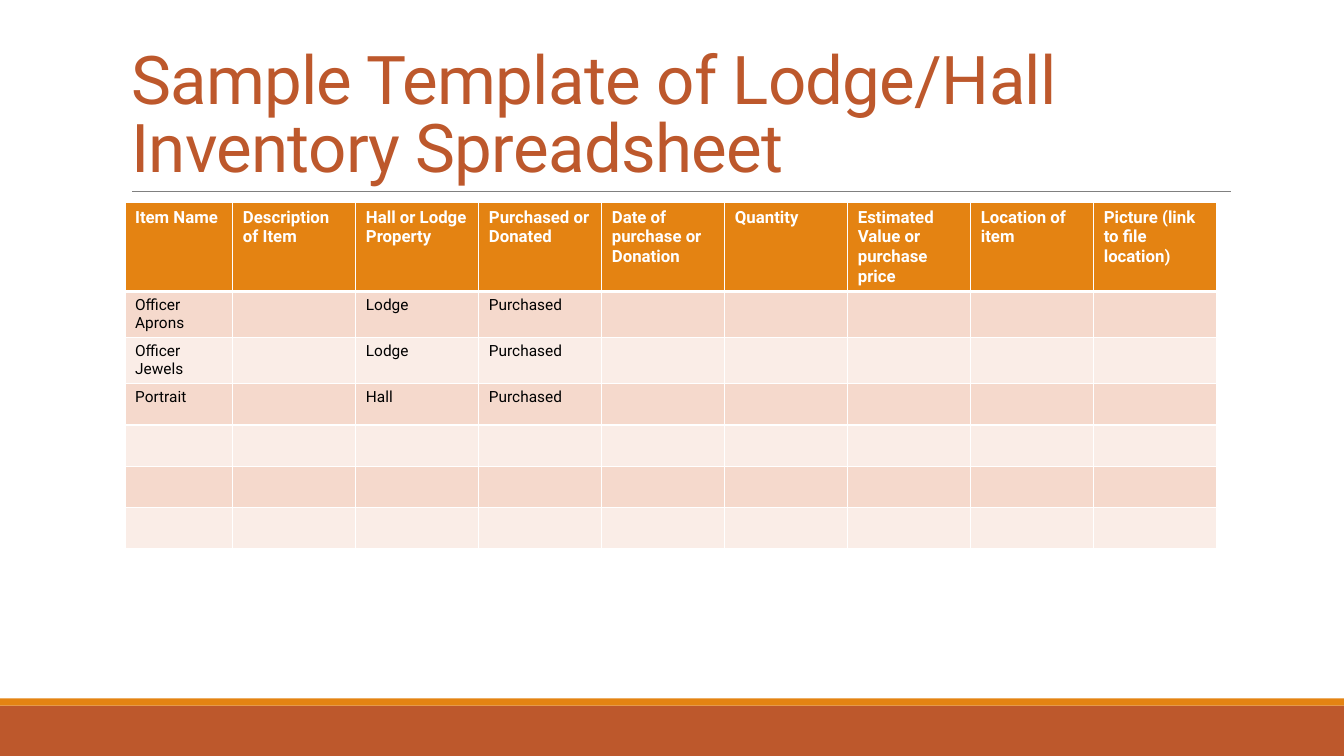
from lxml.etree import SubElement
from pptx import Presentation
from pptx.dml.color import RGBColor
from pptx.enum.shapes import MSO_CONNECTOR as Connector, MSO_SHAPE as Shape
from pptx.enum.text import MSO_ANCHOR as Anchor, MSO_AUTO_SIZE as AutoSize, PP_ALIGN as Align
from pptx.oxml.ns import qn
from pptx.util import Inches, Pt

TITLE = "Sample Template of Lodge/Hall Inventory Spreadsheet"
HEADERS = [
    "Item Name", "Description of Item", "Hall or Lodge Property",
    "Purchased or Donated", "Date of purchase or Donation", "Quantity",
    "Estimated Value or purchase price", "Location of item",
    "Picture (link to file location)",
]
ITEMS = [
    ("Officer Aprons", "", "Lodge", "Purchased"),
    ("Officer Jewels", "", "Lodge", "Purchased"),
    ("Portrait", "", "Hall", "Purchased"),
]
BLANK_ROWS = 3
FONT = "Roboto"
RUST, ORANGE, WHITE, BLACK, GRAY = "BD582C", "E48312", "FFFFFF", "000000", "808080"
BANDS = ["F5D9CC", "FAEDE7"]
FOOTER_BANDS = [(7, 0.5, RUST), (6.93, 0.07, ORANGE)]
FIRST_WIDTH, OTHER_WIDTH, ROW_HEIGHT = 1.07, 1.22, 0.41


def color(value):
    return RGBColor.from_string(value)


def paint(target, value):
    target.fill.solid()
    target.fill.fore_color.rgb = color(value)


def style(para, size, value, bold=False):
    para.font.name = FONT
    para.font.size = Pt(size)
    para.font.bold = bold
    para.font.color.rgb = color(value)


def add_borders(cell, bottom):
    properties = cell._tc.get_or_add_tcPr()
    widths = {"a:lnL": 1, "a:lnR": 1, "a:lnT": 1, "a:lnB": bottom}
    for position, (tag, width) in enumerate(widths.items()):
        line = SubElement(properties, qn(tag), w=str(Pt(width)))
        fill = SubElement(line, qn("a:solidFill"))
        SubElement(fill, qn("a:srgbClr"), val=WHITE)
        properties.insert(position, line)


def add_frame(page):
    for top, height, value in FOOTER_BANDS:
        band = page.shapes.add_shape(
            Shape.RECTANGLE, 0, Inches(top), Inches(13.33), Inches(height))
        band.shadow.inherit = False
        paint(band, value)
        band.line.fill.background()
    rule = page.shapes.add_connector(
        Connector.STRAIGHT, Inches(1.31), Inches(1.9), Inches(12.21), Inches(1.9))
    rule.line.color.rgb = color(GRAY)
    rule.line.width = Pt(0.5)
    SubElement(rule._element.spPr, qn("a:effectLst"))


def add_title(page):
    title = page.shapes.title
    title.left, title.top = Inches(1.2), Inches(0.31)
    title.width, title.height = Inches(11), Inches(1.59)
    frame = title.text_frame
    frame.text = TITLE
    frame.word_wrap = True
    frame.auto_size = AutoSize.NONE
    frame.vertical_anchor = Anchor.BOTTOM
    para = frame.paragraphs[0]
    para.alignment = Align.LEFT
    para.line_spacing = 0.85
    style(para, 48, RUST)
    para.runs[0].font._element.set("spc", "-50")


def add_inventory(page):
    rows = [HEADERS, *ITEMS, *[()] * BLANK_ROWS]
    widths = [FIRST_WIDTH] + [OTHER_WIDTH] * (len(HEADERS) - 1)
    table = page.shapes.add_table(
        len(rows), len(widths), Inches(1.24), Inches(2.01),
        Inches(sum(widths)), Inches(ROW_HEIGHT * len(rows))).table
    for column, width in zip(table.columns, widths):
        column.width = Inches(width)
    for number, texts in enumerate(rows):
        table.rows[number].height = Inches(ROW_HEIGHT)
        header = number == 0
        for index in range(len(widths)):
            cell = table.cell(number, index)
            paint(cell, ORANGE if header else BANDS[(number - 1) % 2])
            add_borders(cell, 3 if header else 1)
            if index < len(texts) and texts[index]:
                cell.text = texts[index]
                style(cell.text_frame.paragraphs[0], 12 if header else 11,
                      WHITE if header else BLACK, header)


def main():
    deck = Presentation()
    deck.slide_width, deck.slide_height = Inches(13.33), Inches(7.5)
    page = deck.slides.add_slide(deck.slide_layouts[5])
    add_frame(page)
    add_title(page)
    add_inventory(page)
    deck.save("out.pptx")


if __name__ == "__main__":
    main()
